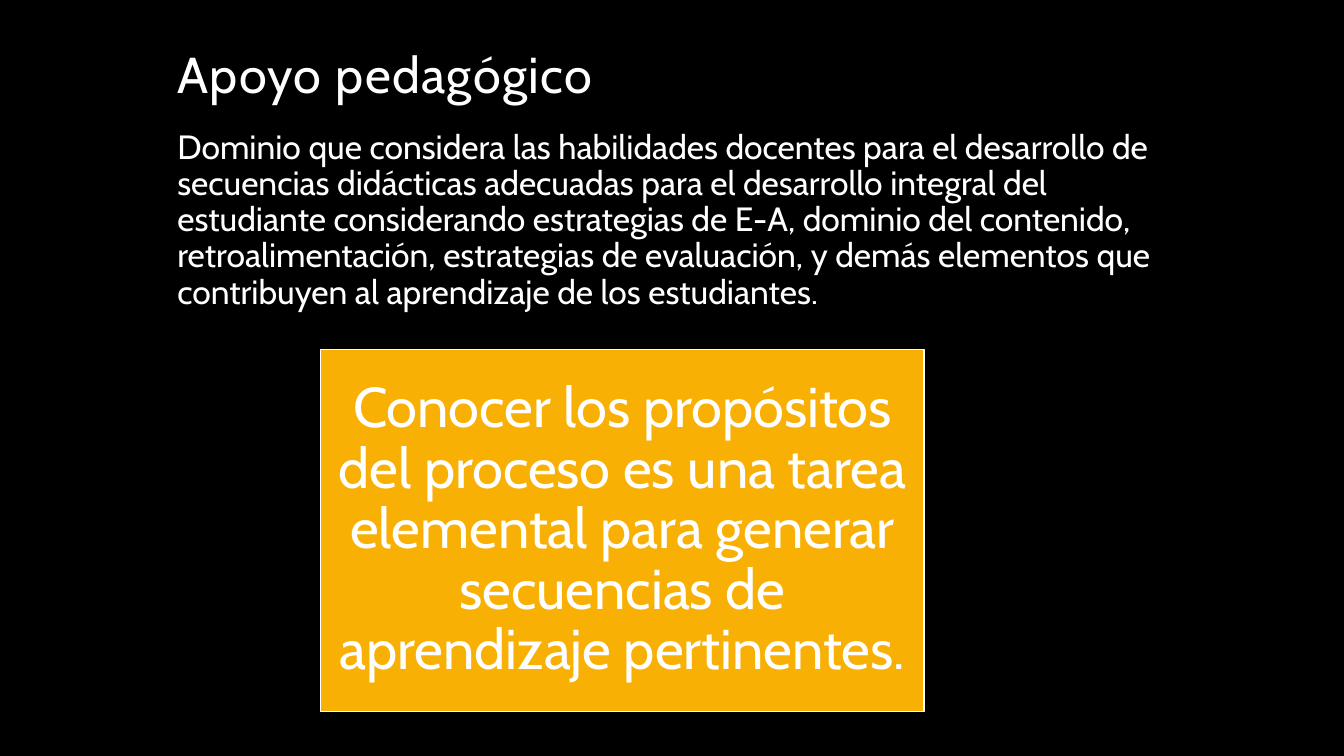
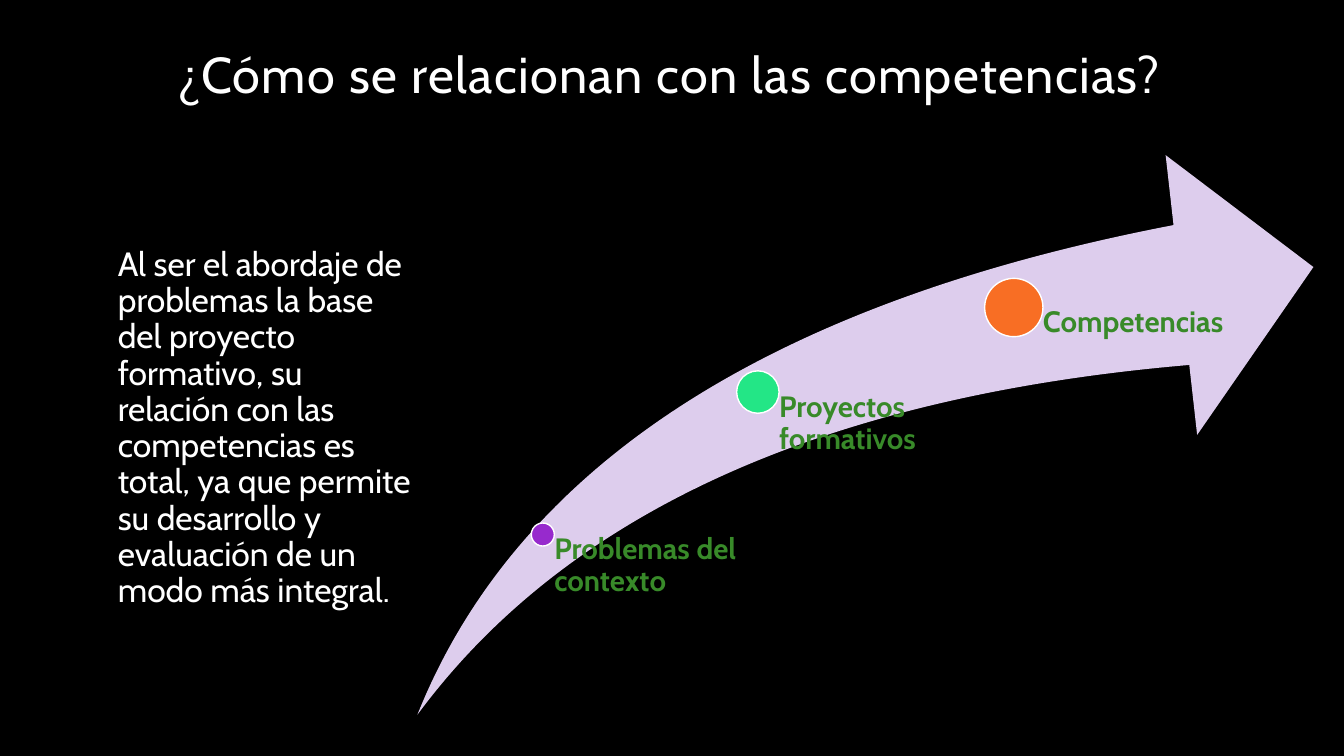
from pptx import Presentation
from pptx.dml.color import RGBColor
from pptx.enum.shapes import MSO_SHAPE
from pptx.enum.text import MSO_ANCHOR, PP_ALIGN
from pptx.util import Cm, Pt

RECT, OVAL, SWOOSH = MSO_SHAPE.RECTANGLE, MSO_SHAPE.OVAL, MSO_SHAPE.SWOOSH_ARROW
TOP, MIDDLE, BOTTOM = MSO_ANCHOR.TOP, MSO_ANCHOR.MIDDLE, MSO_ANCHOR.BOTTOM
LEFT, CENTER = PP_ALIGN.LEFT, PP_ALIGN.CENTER

# Shared style
FONT = "Cabin"
BLACK, WHITE, GREEN = "000000", "FFFFFF", "388A29"
AMBER, LILAC = "F8B004", "DDCDED"
INSETS = (0.25, 0.13, 0.25, 0.13)


def color(code):
    return RGBColor.from_string(code)


def write(shape, text, size=24, ink=WHITE, bold=False, align=LEFT,
          anchor=TOP, insets=INSETS, track=0):
    """Put one formatted paragraph into a shape; track is in points."""
    frame = shape.text_frame
    frame.word_wrap = True
    frame.vertical_anchor = anchor
    (frame.margin_left, frame.margin_top,
     frame.margin_right, frame.margin_bottom) = map(Cm, insets)
    para = frame.paragraphs[0]
    para.alignment = align
    para.line_spacing = 0.9
    run = para.add_run()
    run.text = text
    font = run.font
    font.name, font.size, font.bold = FONT, Pt(size), bold
    font.color.rgb = color(ink)
    if track:
        run._r.get_or_add_rPr().set("spc", str(track * 100))


class Deck:
    def __init__(self):
        self.file = Presentation()
        self.file.slide_width, self.file.slide_height = Cm(33.87), Cm(19.05)
        self.slide = None

    def page(self, title):
        """Start a black slide with its title."""
        self.slide = self.file.slides.add_slide(self.file.slide_layouts[6])
        fill = self.slide.background.fill
        fill.solid()
        fill.fore_color.rgb = color(BLACK)
        self.text(title, 4.22, 1.07, 25.4, 1.68, size=36, anchor=BOTTOM, track=1)

    def text(self, words, x, y, w, h, **style):
        box = self.slide.shapes.add_textbox(Cm(x), Cm(y), Cm(w), Cm(h))
        write(box, words, **style)

    def shape(self, kind, x, y, w, h, fill, line=None):
        item = self.slide.shapes.add_shape(kind, Cm(x), Cm(y), Cm(w), Cm(h))
        item.shadow.inherit = False
        item.fill.solid()
        item.fill.fore_color.rgb = color(fill)
        if line:
            item.line.color.rgb = color(line)
            item.line.width = Pt(1)
        else:
            item.line.fill.background()
        return item

    def step(self, label, x, y, size, fill):
        """Draw a dot centred on x, y with its label below right."""
        half = size / 2
        self.shape(OVAL, x - half, y - half, size, size, fill, WHITE)
        self.text(label, x, y, 5.4, 17.55 - y, size=21, ink=GREEN, bold=True,
                  insets=(half, 0, 0, 0))


def main():
    deck = Deck()

    # Teaching support
    deck.page("Apoyo pedagógico")
    deck.text("Dominio que considera las habilidades docentes para el desarrollo "
              "de secuencias didácticas adecuadas para el desarrollo integral del "
              "estudiante considerando estrategias de E-A, dominio del contenido, "
              "retroalimentación, estrategias de evaluación, y demás elementos que "
              "contribuyen al aprendizaje de los estudiantes.",
              4.22, 3.15, 25.37, 5.16)
    card = deck.shape(RECT, 8.08, 8.81, 15.21, 9.12, AMBER, WHITE)
    write(card, "Conocer los propósitos del proceso es una tarea elemental para "
                "generar secuencias de aprendizaje pertinentes.",
          size=40, align=CENTER, anchor=MIDDLE, insets=(0.43,) * 4)

    # Link to competences
    deck.page("¿Cómo se relacionan con las competencias?")
    deck.text("Al ser el abordaje de problemas la base del proyecto formativo, su "
              "relación con las competencias es total, ya que permite su "
              "desarrollo y evaluación de un modo más integral.",
              2.72, 6.1, 8.1, 9.25)
    arrow = deck.shape(SWOOSH, 10.52, 3.91, 22.58, 14.1, LILAC)
    arrow.adjustments[0] = arrow.adjustments[1] = 0.25
    for step in (("Problemas del contexto", 13.68, 13.47, 0.58, "972ACD"),
                 ("Proyectos formativos", 19.1, 9.88, 1.07, "23E686"),
                 ("Competencias", 25.55, 7.75, 1.47, "F86E24")):
        deck.step(*step)

    deck.file.save("out.pptx")


if __name__ == "__main__":
    main()
